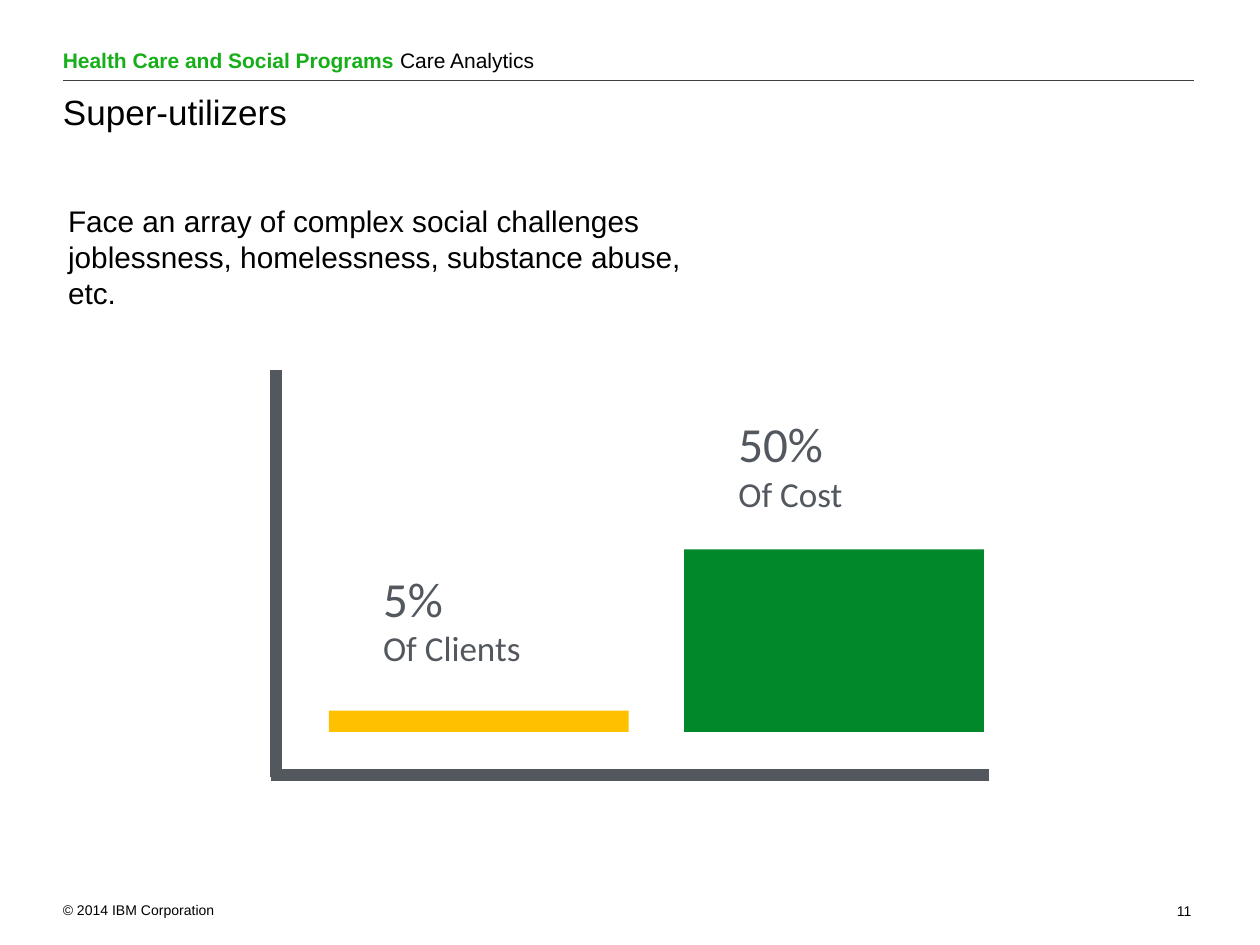
"""Build the super-utilizers slide with its two-bar cost comparison."""
from lxml import etree
from pptx import Presentation
from pptx.dml.color import RGBColor
from pptx.enum.shapes import MSO_CONNECTOR, MSO_SHAPE
from pptx.enum.text import MSO_ANCHOR
from pptx.oxml.ns import qn
from pptx.util import Emu, Pt

RECT = MSO_SHAPE.RECTANGLE
STRAIGHT = MSO_CONNECTOR.STRAIGHT
TOP = MSO_ANCHOR.TOP

BLACK = RGBColor(0x00, 0x00, 0x00)
RULE_GREY = RGBColor(0x40, 0x40, 0x40)
SLATE = RGBColor(0x53, 0x58, 0x5F)
HEADER_GREEN = RGBColor(0x16, 0xAF, 0x19)
COST_GREEN = RGBColor(0x00, 0x88, 0x2B)
CLIENT_AMBER = RGBColor(0xFF, 0xC0, 0x00)

PX = 9144
BAR_WIDTH = 238
BAR_BASE = 581


class Deck:
    """Holds the style and the current slide."""

    def __init__(self, width, height):
        self.prs = Presentation()
        self.prs.slide_width = Emu(width * PX)
        self.prs.slide_height = Emu(height * PX)
        self.s = self.prs.slides.add_slide(self.prs.slide_layouts[6])

    def text(self, x, y, w, h, paragraphs, font="Arial", pad=(0, 0)):
        """Add a text box; each run is (text, size, colour, bold)."""
        sp = self.s.shapes.add_textbox(*(Emu(v * PX) for v in (x, y, w, h)))
        tf = sp.text_frame
        tf.word_wrap = True
        tf.vertical_anchor = TOP
        tf.margin_left = tf.margin_right = Emu(pad[0] * PX)
        tf.margin_top = tf.margin_bottom = Emu(pad[1] * PX)
        for i, runs in enumerate(paragraphs):
            p = tf.add_paragraph() if i else tf.paragraphs[0]
            for text, size, colour, bold in runs:
                r = p.add_run()
                r.text = text
                r.font.name = font
                r.font.size = Pt(size)
                r.font.color.rgb = colour
                r.font.bold = bold

    def line(self, x1, y1, x2, y2, colour, width):
        """Add a straight line without a shadow."""
        ends = (Emu(v * PX) for v in (x1, y1, x2, y2))
        sp = self.s.shapes.add_connector(STRAIGHT, *ends)
        sp.line.color.rgb = colour
        sp.line.width = Pt(width)
        etree.SubElement(sp._element.spPr, qn("a:effectLst"))

    def bar(self, x, height, colour):
        """Add a bar standing on the common base."""
        box = (x, BAR_BASE - height, BAR_WIDTH, height)
        sp = self.s.shapes.add_shape(RECT, *(Emu(v * PX) for v in box))
        sp.shadow.inherit = False
        sp.fill.solid()
        sp.fill.fore_color.rgb = colour
        sp.line.fill.background()


def main():
    """Draw the slide and save it."""
    deck = Deck(1000, 750)

    deck.line(50, 64, 948, 64, RULE_GREY, 0.75)
    deck.text(40, 33, 827, 30, [[
        ("Health Care and Social Programs ", 12, HEADER_GREEN, True),
        ("Care Analytics", 12, BLACK, False),
    ]], pad=(10, 5))
    deck.text(50, 72, 894, 46, [[("Super-utilizers", 20, BLACK, False)]])
    deck.text(50, 157, 536, 93, [[(
        "Face an array of complex social challenges "
        "joblessness, homelessness, substance abuse, etc.",
        17, BLACK, False)]], pad=(4, 4))

    bars = [
        (261, 17, CLIENT_AMBER, 446, "5%", "Of Clients"),
        (543, 145, COST_GREEN, 323, "50%", "Of Cost"),
    ]
    for x, height, colour, label_y, share, caption in bars:
        deck.bar(x, height, colour)
        deck.text(x + 38, label_y, 162, 92, [
            [(share, 28, SLATE, False)],
            [(caption, 20, SLATE, False)],
        ], font="Calibri", pad=(5, 5))
    deck.line(219, 617, 219, 294, SLATE, 7)
    deck.line(785, 615, 215, 615, SLATE, 7)

    deck.text(40, 711, 334, 23,
              [[("© 2014 IBM Corporation", 8, BLACK, False)]], pad=(10, 5))
    deck.text(934, 716, 45, 13, [[("11", 8, BLACK, False)]])

    deck.prs.save("out.pptx")


if __name__ == "__main__":
    main()
